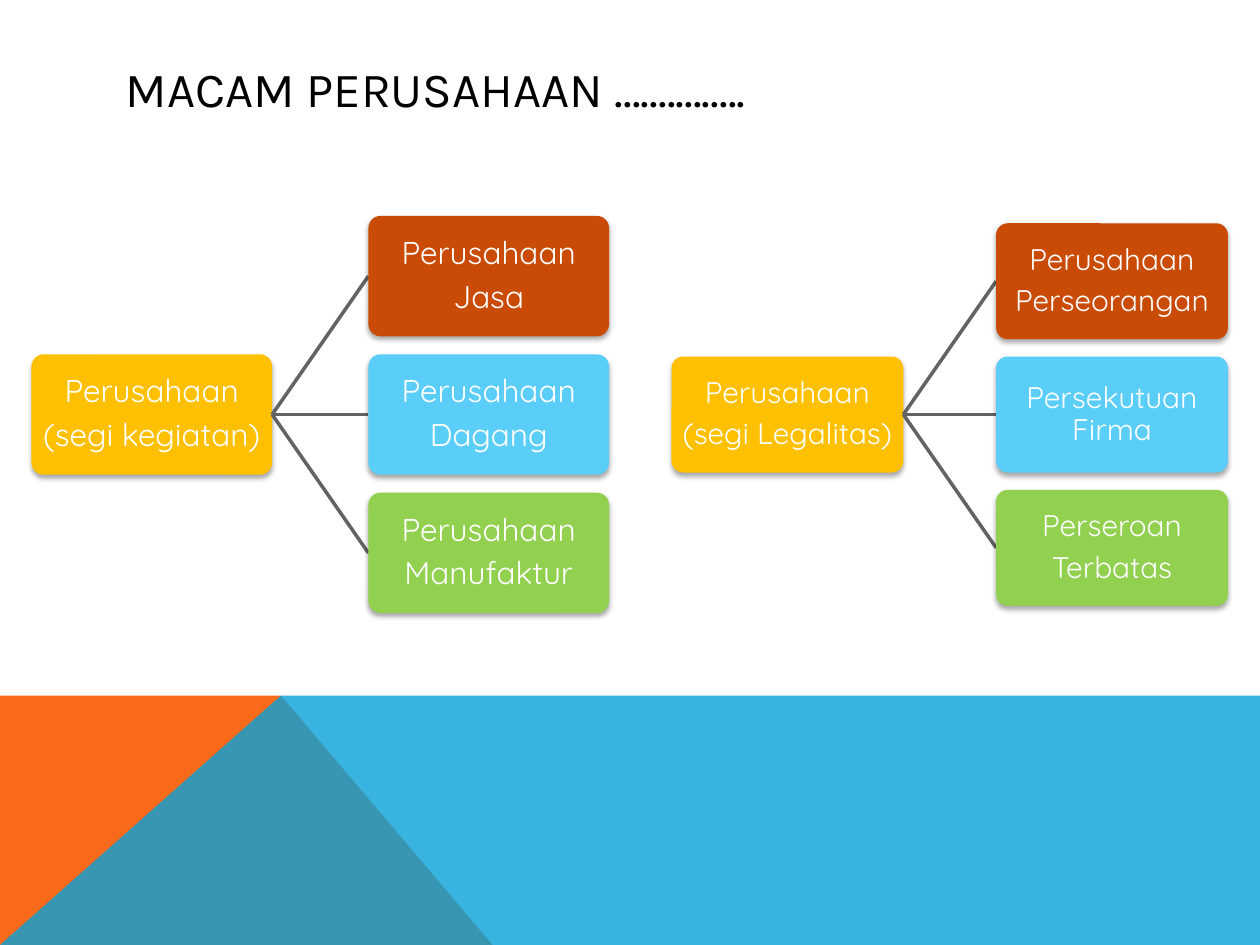
from dataclasses import dataclass

from lxml import etree
from pptx import Presentation
from pptx.dml.color import RGBColor
from pptx.enum import shapes, text
from pptx.oxml import ns
from pptx.util import Inches, Pt

SLIDE_WIDTH, SLIDE_HEIGHT = 10, 7.5
COLUMN_PITCH, ROW_PITCH, BOX_RATIO = 1.4, 0.575, 0.5
TREE_MIDDLE = 3.29
ROOT_COLOR = "FFC000"
BRANCH_COLORS = ("CA4B05", "5ACEF9", "92D050")
LINE_COLOR = "616365"
BAND_TOP, PEAK = 0.736, 0.223


@dataclass(frozen=True)
class Tree:
    left: float
    box_width: float
    size: int
    root: tuple[str, ...]
    branches: tuple[tuple[str, ...], ...]


@dataclass(frozen=True)
class Band:
    points: tuple[tuple[float, float], ...]
    color: str
    alpha: int = 100


BANDS = (
    Band(((0, 1), (0, BAND_TOP), (PEAK, BAND_TOP), (0.391, 1)), "F96A1B"),
    Band(((0, 1), (PEAK, BAND_TOP), (1, BAND_TOP), (1, 1)), "08A1D9", 80),
)
TREES = (
    Tree(0.25, 1.91, 18, ("Perusahaan", "(segi kegiatan)"),
         (("Perusahaan", "Jasa"), ("Perusahaan", "Dagang"), ("Perusahaan", "Manufaktur"))),
    Tree(5.33, 1.84, 17, ("Perusahaan", "(segi Legalitas)"),
         (("Perusahaan", "Perseorangan"), ("Persekutuan Firma",), ("Perseroan", "Terbatas"))),
)


def rgb(color: str) -> RGBColor:
    return RGBColor.from_string(color)


def set_attributes(target, values: dict) -> None:
    for name, value in values.items():
        setattr(target, name, value)


def add_element(parent, tag: str, **attributes):
    element = etree.SubElement(parent, ns.qn(tag))
    for name, value in attributes.items():
        element.set(name, str(value))
    return element


def fill_shape(shape, color: str) -> None:
    shape.shadow.inherit = False
    shape.fill.solid()
    shape.fill.fore_color.rgb = rgb(color)
    shape.line.fill.background()


def draw_band(slide, band: Band) -> None:
    points = [(Inches(x * SLIDE_WIDTH), Inches(y * SLIDE_HEIGHT)) for x, y in band.points]
    builder = slide.shapes.build_freeform(*points[0])
    builder.add_line_segments(points[1:], close=True)
    shape = builder.convert_to_shape()
    fill_shape(shape, band.color)
    if band.alpha < 100:
        color = shape._element.spPr.find(".//" + ns.qn("a:srgbClr"))
        add_element(color, "a:alpha", val=band.alpha * 1000)


def write_lines(frame, lines: tuple[str, ...], paragraph_format: dict, font_format: dict,
                color: str) -> None:
    for index, line in enumerate(lines):
        paragraph = frame.add_paragraph() if index else frame.paragraphs[0]
        set_attributes(paragraph, paragraph_format)
        run = paragraph.add_run()
        run.text = line
        set_attributes(run.font, font_format)
        run.font.color.rgb = rgb(color)


def draw_title(slide) -> None:
    box = slide.shapes.add_textbox(Inches(0.9), Inches(0.4), Inches(8.22), Inches(0.6))
    set_attributes(box.text_frame,
                   {"word_wrap": True, "vertical_anchor": text.MSO_ANCHOR.MIDDLE})
    write_lines(box.text_frame, ("MACAM PERUSAHAAN ...............",), {},
                {"name": "Karla", "size": Pt(28)}, "000000")


def draw_box(slide, tree: Tree, column: int, row: int, lines: tuple[str, ...],
             color: str) -> None:
    width, height = tree.box_width, tree.box_width * BOX_RATIO
    left = tree.left + column * COLUMN_PITCH * width
    top = TREE_MIDDLE + row * ROW_PITCH * width - height / 2
    shape = slide.shapes.add_shape(shapes.MSO_SHAPE.ROUNDED_RECTANGLE, Inches(left),
                                   Inches(top), Inches(width), Inches(height))
    shape.adjustments[0] = 0.1
    fill_shape(shape, color)
    effects = shape._element.spPr.find(ns.qn("a:effectLst"))
    shadow = add_element(effects, "a:outerShdw", blurRad=Pt(3.1), dist=Pt(1.8),
                         dir=90 * 60000, rotWithShape=0)
    shadow_color = add_element(shadow, "a:srgbClr", val="000000")
    add_element(shadow_color, "a:alpha", val=35000)
    margins = dict.fromkeys(
        ("margin_left", "margin_right", "margin_top", "margin_bottom"), Inches(0.04))
    set_attributes(shape.text_frame, margins | {
        "word_wrap": True, "vertical_anchor": text.MSO_ANCHOR.MIDDLE})
    write_lines(shape.text_frame, lines,
                {"alignment": text.PP_ALIGN.CENTER, "line_spacing": 0.9,
                 "space_after": Pt(round(0.3 * tree.size, 1))},
                {"name": "Quicksand", "size": Pt(tree.size)}, "FFFFFF")


def draw_link(slide, tree: Tree, row: int) -> None:
    start = tree.left + tree.box_width
    end = tree.left + COLUMN_PITCH * tree.box_width
    link = slide.shapes.add_connector(
        shapes.MSO_CONNECTOR.STRAIGHT, Inches(start), Inches(TREE_MIDDLE), Inches(end),
        Inches(TREE_MIDDLE + row * ROW_PITCH * tree.box_width))
    link.line.color.rgb = rgb(LINE_COLOR)
    link.line.width = Pt(2)
    add_element(link._element.spPr, "a:effectLst")


def draw_tree(slide, tree: Tree) -> None:
    draw_box(slide, tree, 0, 0, tree.root, ROOT_COLOR)
    for row, (lines, color) in enumerate(zip(tree.branches, BRANCH_COLORS), start=-1):
        draw_link(slide, tree, row)
        draw_box(slide, tree, 1, row, lines, color)


def main() -> None:
    presentation = Presentation()
    presentation.slide_width = Inches(SLIDE_WIDTH)
    presentation.slide_height = Inches(SLIDE_HEIGHT)
    slide = presentation.slides.add_slide(presentation.slide_layouts[6])
    for band in BANDS:
        draw_band(slide, band)
    draw_title(slide)
    for tree in TREES:
        draw_tree(slide, tree)
    presentation.save("out.pptx")


if __name__ == "__main__":
    main()
